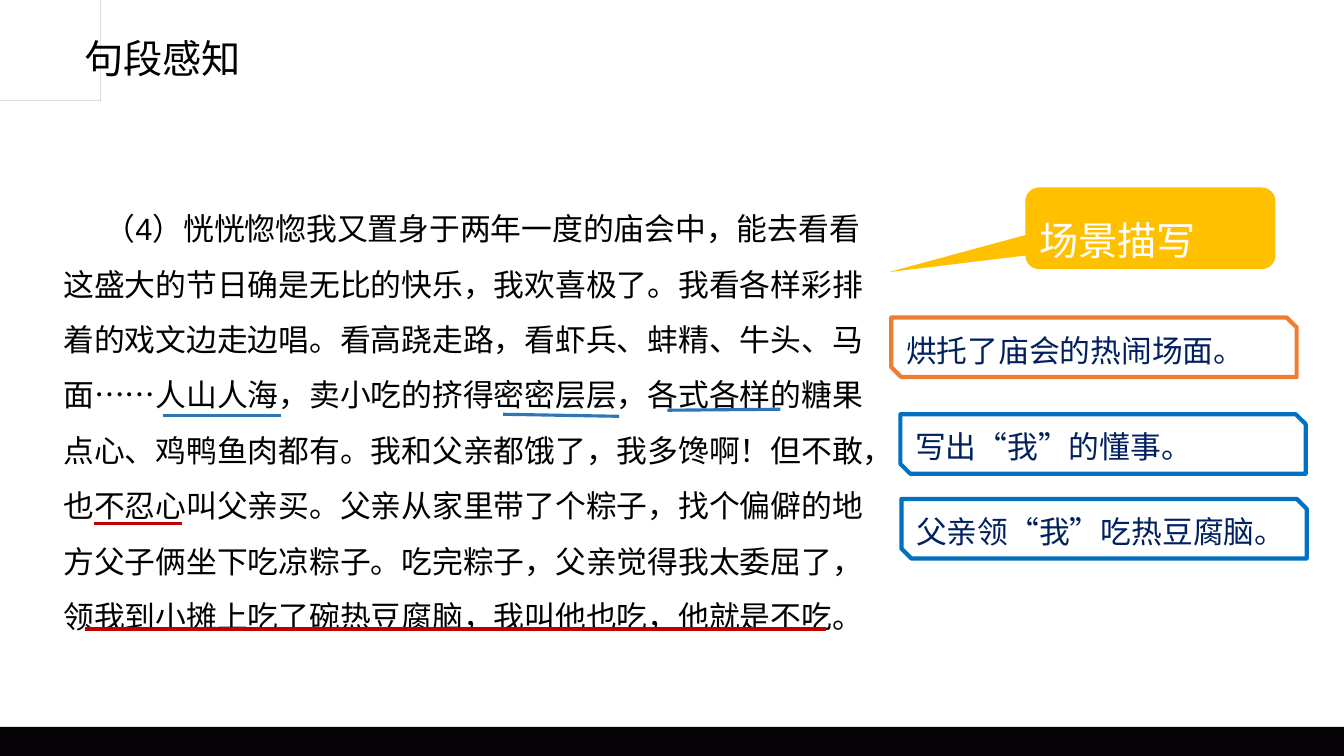
import pptx
import pptx.util
import pptx.dml.color
import pptx.enum.shapes
import pptx.enum.text
from pptx.util import Inches
from lxml import etree

SHAPES = pptx.enum.shapes.MSO_SHAPE


def color(value):
    return pptx.dml.color.RGBColor.from_string(value)


def write(shape, text, size, text_color, spacing):
    """Put one left-aligned paragraph in the shape and return it."""
    frame = shape.text_frame
    frame.word_wrap = True
    paragraph = frame.paragraphs[0]
    paragraph.text = text
    paragraph.alignment = pptx.enum.text.PP_ALIGN.LEFT
    paragraph.line_spacing = spacing
    paragraph.font.name = "Arial"
    paragraph.font.size = pptx.util.Pt(size)
    paragraph.font.color.rgb = color(text_color)
    return paragraph


presentation = pptx.Presentation()
presentation.slide_width = Inches(13.33)
presentation.slide_height = Inches(7.5)
slide = presentation.slides.add_slide(presentation.slide_layouts[6])
shapes = slide.shapes

# Footer band
footer = shapes.add_shape(SHAPES.RECTANGLE, 0, Inches(7.21), Inches(13.33), Inches(0.29))
footer.shadow.inherit = False
footer.fill.solid()
footer.fill.fore_color.rgb = color("050305")
footer.line.fill.background()

# Bookmark icon: outer edge, inner edge, corner highlight
bookmark_outlines = [
    [(0.35, 0.28), (0.33, 0.3), (0.33, 1.01), (0.35, 1.03), (0.36, 1.02), (0.47, 0.88),
     (0.59, 1.02), (0.61, 1.02), (0.62, 1.01), (0.62, 0.3), (0.6, 0.28)],
    [(0.36, 0.31), (0.59, 0.31), (0.59, 0.98), (0.48, 0.85), (0.47, 0.85), (0.36, 0.98)],
    [(0.38, 0.33), (0.38, 0.51), (0.39, 0.51), (0.39, 0.34), (0.48, 0.34), (0.48, 0.33)],
]
builder = shapes.build_freeform(*bookmark_outlines[0][0], scale=Inches(1))
for outline in bookmark_outlines:
    builder.move_to(*outline[0])
    builder.add_line_segments(outline[1:], close=True)
bookmark = builder.convert_to_shape()
bookmark.shadow.inherit = False
bookmark.fill.solid()
bookmark.fill.fore_color.rgb = color("050305")
bookmark.line.fill.background()

# Heading
heading = shapes.add_textbox(Inches(0.74), Inches(0.29), Inches(1.77), Inches(0.57))
write(heading, "句段感知", 28, "000000", 1.0)
heading.text_frame.word_wrap = False

# Callout
callout = shapes.add_shape(SHAPES.ROUNDED_RECTANGULAR_CALLOUT,
                           Inches(10.17), Inches(1.86), Inches(2.48), Inches(0.81))
callout.shadow.inherit = False
for index, adjustment in enumerate([-1.047, 0.537, 0.167]):
    callout.adjustments[index] = adjustment
callout.fill.solid()
callout.fill.fore_color.rgb = color("FFC000")
callout.line.fill.background()
write(callout, "场景描写", 28, "FFFFFF", 1.5)

# Passage
passage = shapes.add_textbox(Inches(0.53), Inches(1.85), Inches(8.31), Inches(4.54))
passage_paragraph = write(
    passage,
    "（4）恍恍惚惚我又置身于两年一度的庙会中，能去看看这盛大的节日确是无比的快乐，"
    "我欢喜极了。我看各样彩排着的戏文边走边唱。看高跷走路，看虾兵、蚌精、牛头、马面……"
    "人山人海，卖小吃的挤得密密层层，各式各样的糖果点心、鸡鸭鱼肉都有。我和父亲都饿了，"
    "我多馋啊！但不敢，也不忍心叫父亲买。父亲从家里带了个粽子，找个偏僻的地方父子俩坐下"
    "吃凉粽子。吃完粽子，父亲觉得我太委屈了，领我到小摊上吃了碗热豆腐脑，我叫他也吃，"
    "他就是不吃。",
    22, "000000", 1.5)
passage_paragraph._p.get_or_add_pPr().set("indent", str(Inches(0.41)))

# Underlines in the passage
underlines = [
    (1.62, 4.12, 2.79, 4.12, "2E75B6"),
    (4.99, 4.11, 6.14, 4.13, "2E75B6"),
    (6.62, 4.07, 7.74, 4.06, "2E75B6"),
    (0.93, 5.19, 1.81, 5.19, "C00000"),
    (0.84, 6.24, 8.19, 6.24, "C00000"),
]
for *ends, line_color in underlines:
    underline = shapes.add_connector(pptx.enum.shapes.MSO_CONNECTOR.STRAIGHT,
                                     *[Inches(value) for value in ends])
    underline.line.color.rgb = color(line_color)
    underline.line.width = pptx.util.Pt(2.25)
    etree.SubElement(underline._element.spPr, pptx.oxml.ns.qn("a:effectLst"))

# Notes beside the passage
notes = [
    (8.84, 3.15, "ED7D31", "烘托了庙会的热闹场面。"),
    (8.93, 4.11, "0070C0", "写出“我”的懂事。"),
    (8.94, 4.95, "0070C0", "父亲领“我”吃热豆腐脑。"),
]
for left, top, border_color, text in notes:
    note = shapes.add_shape(SHAPES.SNIP_2_DIAG_RECTANGLE,
                            Inches(left), Inches(top), Inches(4.02), Inches(0.59))
    note.shadow.inherit = False
    note.fill.background()
    note.line.color.rgb = color(border_color)
    note.line.width = pptx.util.Pt(3)
    write(note, text, 22, "002060", pptx.util.Pt(30))

presentation.save("out.pptx")
